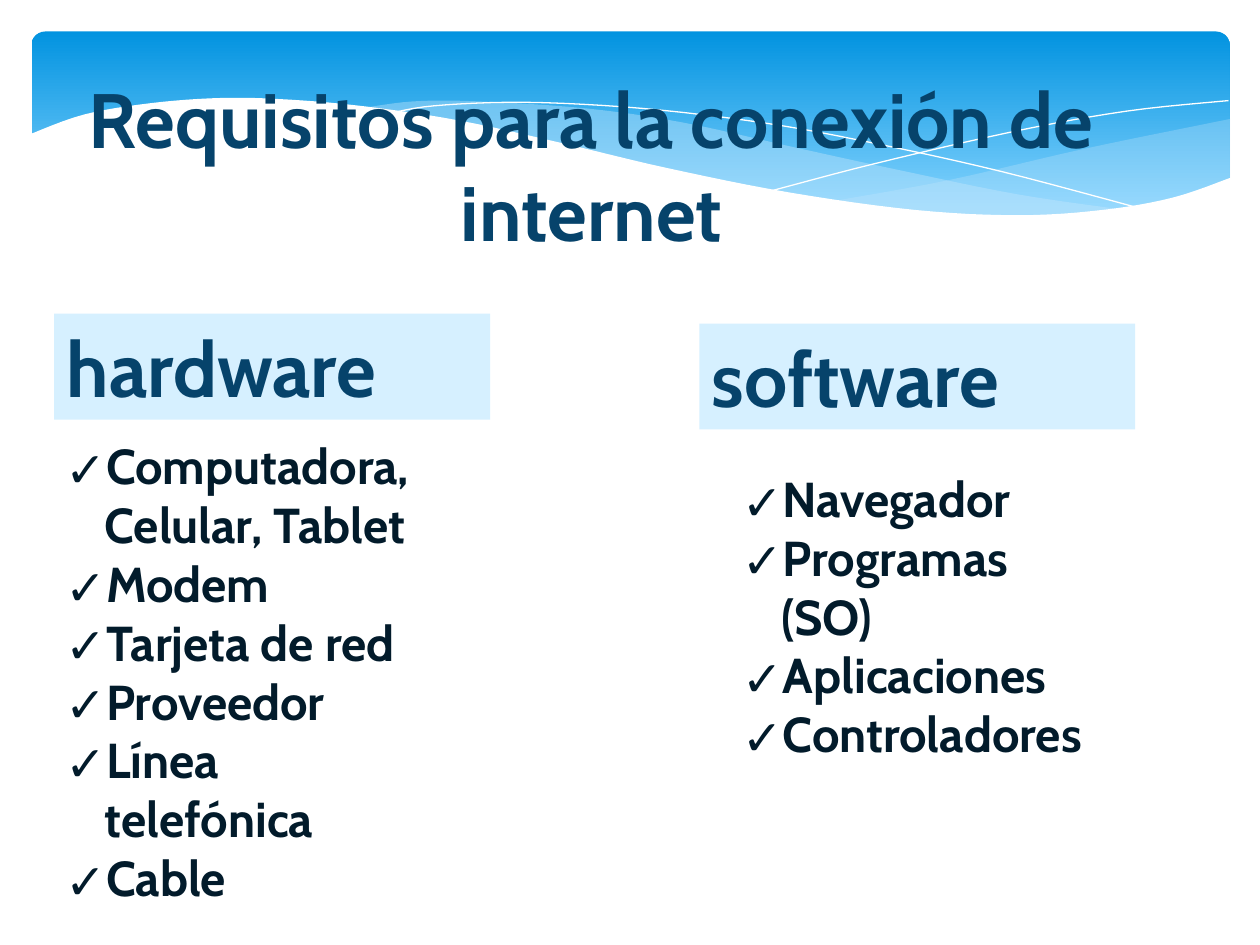
"""Build the slide on the hardware and software needed for an internet connection."""
from lxml import etree
from pptx import Presentation
from pptx.dml.color import RGBColor
from pptx.enum.shapes import MSO_SHAPE
from pptx.enum.text import MSO_ANCHOR, PP_ALIGN
from pptx.oxml.ns import qn
from pptx.util import Pt

RECT, ROUNDED = MSO_SHAPE.RECTANGLE, MSO_SHAPE.ROUNDED_RECTANGLE
TOP, MIDDLE = MSO_ANCHOR.TOP, MSO_ANCHOR.MIDDLE
CENTER, LEFT = PP_ALIGN.CENTER, PP_ALIGN.LEFT

FONT = "Cabin"
COLORS = {
    "sky": "0293E0", "pale sky": "83D3FE", "wave": "C6E7FC", "white": "FFFFFF",
    "heading": "06436B", "label": "D6F0FF", "body": "021B2B",
}
TITLE = ("Requisitos para la conexión de internet", (0.7, 37.4, 674.6, 113.8))
COLUMNS = [
    {"heading": "hardware", "label": (31, 179.3, 249.1, 60.5),
     "list": (30.2, 245.5, 226.8, 312.5),
     "items": ["Computadora, Celular, Tablet", "Modem", "Tarjeta de red",
               "Proveedor", "Línea telefónica", "Cable"]},
    {"heading": "software", "label": (399.6, 185, 249.1, 60.5),
     "list": (416.9, 264.2, 221, 220.3),
     "items": ["Navegador", "Programas (SO)", "Aplicaciones", "Controladores"]},
]
RIGHT_WAVE = [
    [(703, 68), (620, 85), (542, 103), (476, 115)],
    [(476, 115), (527, 121), (578, 124), (628, 122), (668, 114), (703, 102)],
]
MIDDLE_WAVE = [
    [(643, 120), (581, 111), (508, 96), (453, 84), (390, 70), (335, 62),
     (274, 58), (236, 58), (206, 62)],
    [(206, 62), (261, 70), (323, 83), (408, 103), (468, 114), (520, 121),
     (581, 124.5), (617, 123), (643, 120)],
]
FALLING_LINE = [[(222, 65), (248, 60.5), (300, 58.5), (367, 62), (438, 70.5),
                 (500, 82), (572, 98), (653, 119.5)]]
RISING_LINE = [[(441, 109), (500, 93.5), (580, 75), (644, 63.5), (702, 57.5)]]
WHITE_WAVE = [
    [(703.5, 101.5), (670, 113), (630, 120), (582, 123), (523, 120), (451, 110),
     (381, 96), (322, 82), (263, 69), (210, 61), (166, 57), (127, 56),
     (86, 59), (48, 65.5), (16.5, 77)],
    [(16.5, 161), (703.5, 161)],
]


def rgb(name):
    return RGBColor.from_string(COLORS[name])


def smooth(knots, steps=6):
    """Return a Catmull-Rom curve through the knots."""
    if len(knots) < 3:
        return knots
    padded = [knots[0], *knots, knots[-1]]
    curve = [knots[0]]
    for a, b, c, d in zip(padded, padded[1:], padded[2:], padded[3:]):
        for i in range(1, steps + 1):
            t = i / steps
            curve.append(tuple(
                (2 * q + (r - p) * t + (2 * p - 5 * q + 4 * r - u) * t ** 2
                 + (3 * q - p - 3 * r + u) * t ** 3) / 2
                for p, q, r, u in zip(a, b, c, d)))
    return curve


def add_curve(s, edges, color, alpha=100, filled=True):
    """Draw smooth edges as one filled wave or as a hairline."""
    points = [(Pt(x), Pt(y)) for edge in edges for x, y in smooth(edge)]
    builder = s.shapes.build_freeform(*points[0], scale=1.0)
    builder.add_line_segments(points[1:], close=filled)
    sp = builder.convert_to_shape()
    sp.shadow.inherit = False
    if not filled:
        sp.fill.background()
        sp.line.color.rgb = rgb(color)
        sp.line.width = Pt(0)
        return
    sp.line.fill.background()
    sp.fill.solid()
    sp.fill.fore_color.rgb = rgb(color)
    if alpha < 100:
        clr = sp.element.spPr.find(qn("a:solidFill"))[0]
        etree.SubElement(clr, qn("a:alpha"), val=str(alpha * 1000))


def add_box(s, kind, box):
    sp = s.shapes.add_shape(kind, *map(Pt, box))
    sp.shadow.inherit = False
    sp.line.fill.background()
    return sp


def write(tf, lines, size, color, align=LEFT, anchor=TOP):
    """Fill a text frame with bold paragraphs."""
    tf.text = "\n".join(lines)
    tf.word_wrap = True
    tf.vertical_anchor = anchor
    for p in tf.paragraphs:
        p.alignment = align
        for r in p.runs:
            r.font.name, r.font.size, r.font.bold = FONT, Pt(size), True
            r.font.color.rgb = rgb(color)


def add_checks(tf):
    for p in tf.paragraphs:
        pPr = p._p.get_or_add_pPr()
        pPr.set("marL", str(Pt(22.5)))
        pPr.set("indent", str(-Pt(22.5)))
        etree.SubElement(pPr, qn("a:buFont"), typeface="Noto Sans Symbols")
        etree.SubElement(pPr, qn("a:buChar"), char="✓")


def add_banner(s):
    sp = add_box(s, ROUNDED, (18, 18, 684.7, 112.3))
    sp.adjustments[0] = 0.07
    sp.fill.gradient()
    sp.fill.gradient_angle = 270
    for stop, color, position in zip(sp.fill.gradient_stops, ("sky", "pale sky"), (0, 0.9)):
        stop.color.rgb = rgb(color)
        stop.position = position
    add_curve(s, RIGHT_WAVE, "wave", 29)
    add_curve(s, MIDDLE_WAVE, "wave", 40)
    add_curve(s, FALLING_LINE, "white", filled=False)
    add_curve(s, RISING_LINE, "white", filled=False)
    add_curve(s, WHITE_WAVE, "white")


def add_title(s):
    text, box = TITLE
    title = s.shapes.title
    title.left, title.top, title.width, title.height = map(Pt, box)
    write(title.text_frame, [text], 44, "heading", CENTER)
    title.element.getparent().append(title.element)


def add_column(s, column):
    sp = add_box(s, RECT, column["label"])
    sp.fill.solid()
    sp.fill.fore_color.rgb = rgb("label")
    write(sp.text_frame, [column["heading"]], 44, "heading", anchor=MIDDLE)
    tf = s.shapes.add_textbox(*map(Pt, column["list"])).text_frame
    write(tf, column["items"], 28, "body")
    add_checks(tf)


def main():
    prs = Presentation()
    prs.slide_width, prs.slide_height = Pt(720), Pt(540)
    s = prs.slides.add_slide(prs.slide_layouts[5])
    add_banner(s)
    add_title(s)
    for column in COLUMNS:
        add_column(s, column)
    prs.save("out.pptx")


if __name__ == "__main__":
    main()
